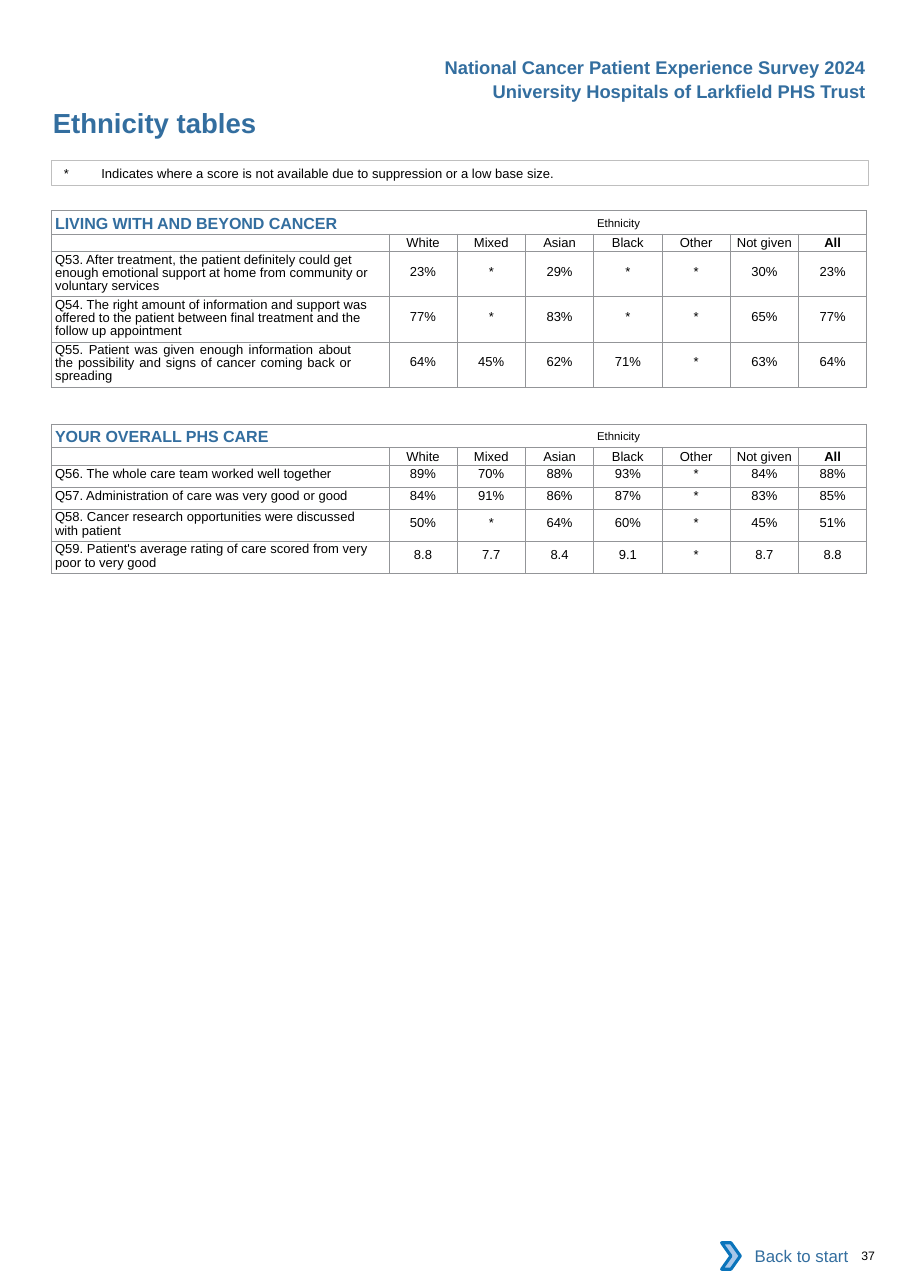
from dataclasses import dataclass

from lxml import etree
from pptx import Presentation
from pptx.dml.color import RGBColor
from pptx.enum import shapes, text
from pptx.oxml import ns
from pptx.util import Inches, Pt


@dataclass(frozen=True)
class Theme:
    font: str = "Arial"
    blue: str = "336E9F"
    black: str = "000000"
    white: str = "FFFFFF"
    grid: str = "939598"
    box_line: str = "BFBFBF"
    chevron_fill: str = "A8C7E9"
    chevron_line: str = "0A74BB"
    title: float = 18
    banner: float = 12
    heading: float = 10.5
    group_label: float = 12.8
    link: float = 11
    body: float = 8.5
    page_number: float = 8


THEME = Theme()
LEFT = 0.47
QUESTION_WIDTH, SCORE_WIDTH = 3.06, 0.62
HEADING_HEIGHT, COLUMN_HEAD_HEIGHT = 0.21, 0.16
# Row height and the top inset of its scores, by lines of question text
ROW_SIZES = {1: (0.2, 0.01), 2: (0.29, 0.06), 3: (0.41, 0.12)}
GROUPS = ["White", "Mixed", "Asian", "Black", "Other", "Not given", "All"]
JUSTIFIED = "Q55."

# Each row: lines of question text, question, scores by group
LIVING_ROWS = [
    (3, "Q53. After treatment, the patient definitely could get enough emotional "
        "support at home from community or voluntary services", "23% * 29% * * 30% 23%"),
    (3, "Q54. The right amount of information and support was offered to the patient "
        "between final treatment and the follow up appointment", "77% * 83% * * 65% 77%"),
    (3, "Q55. Patient was given enough information about the possibility and signs of "
        "cancer coming back or spreading", "64% 45% 62% 71% * 63% 64%"),
]
OVERALL_ROWS = [
    (1, "Q56. The whole care team worked well together", "89% 70% 88% 93% * 84% 88%"),
    (1, "Q57. Administration of care was very good or good", "84% 91% 86% 87% * 83% 85%"),
    (2, "Q58. Cancer research opportunities were discussed with patient",
     "50% * 64% 60% * 45% 51%"),
    (2, "Q59. Patient's average rating of care scored from very poor to very good",
     "8.8 7.7 8.4 9.1 * 8.7 8.8"),
]


def rgb(value):
    return RGBColor.from_string(value)


def style_run(run, size, color=THEME.black, bold=False):
    run.font.name = THEME.font
    run.font.size = Pt(size)
    run.font.bold = bold
    run.font.color.rgb = rgb(color)


def write(frame, content, size, color=THEME.black, bold=False, align=text.PP_ALIGN.LEFT):
    paragraph = frame.paragraphs[0]
    paragraph.text = content
    paragraph.alignment = align
    for run in paragraph.runs:
        style_run(run, size, color, bold)
    return paragraph


def add_tab_stop(paragraph, position):
    """Add a left tab stop, measured from the start of the text."""
    properties = paragraph._p.get_or_add_pPr()
    etree.SubElement(properties, ns.qn("a:buNone"))
    tabs = etree.SubElement(properties, ns.qn("a:tabLst"))
    etree.SubElement(tabs, ns.qn("a:tab"), pos=str(Inches(position)), algn="l")


def set_insets(target, left=0, top=0, right=0, bottom=0):
    target.margin_left, target.margin_top = Inches(left), Inches(top)
    target.margin_right, target.margin_bottom = Inches(right), Inches(bottom)


def add_text(slide, box, content, size, color=THEME.black, bold=False, indent=0):
    frame = slide.shapes.add_textbox(*map(Inches, box)).text_frame
    frame.word_wrap = True
    set_insets(frame, left=indent)
    write(frame, content, size, color, bold)


def add_banner_line(slide, box, content):
    frame = slide.shapes.add_textbox(*map(Inches, box)).text_frame
    frame.word_wrap = False
    frame.auto_size = text.MSO_AUTO_SIZE.SHAPE_TO_FIT_TEXT
    write(frame, content, THEME.banner, THEME.blue, True, text.PP_ALIGN.RIGHT)


def add_preset(slide, kind, box, fill=None, line=None, width=0.5):
    shape = slide.shapes.add_shape(kind, *map(Inches, box))
    shape.shadow.inherit = False
    if fill:
        shape.fill.solid()
        shape.fill.fore_color.rgb = rgb(fill)
    else:
        shape.fill.background()
    if line:
        shape.line.color.rgb = rgb(line)
        shape.line.width = Pt(width)
    else:
        shape.line.fill.background()
    return shape


def add_note(slide):
    shape = add_preset(slide, shapes.MSO_SHAPE.RECTANGLE, (LEFT, 1.46, 7.41, 0.22),
                       line=THEME.box_line)
    frame = shape.text_frame
    set_insets(frame, left=0.11, top=0.04, bottom=0.04)
    frame.vertical_anchor = text.MSO_ANCHOR.TOP
    note = "*\tIndicates where a score is not available due to suppression or a low base size."
    add_tab_stop(write(frame, note, THEME.body), 0.34)


def add_back_link(slide):
    label = add_preset(slide, shapes.MSO_SHAPE.RECTANGLE, (6.62, 11.19, 1.18, 0.42),
                       THEME.white)
    label.text_frame.vertical_anchor = text.MSO_ANCHOR.MIDDLE
    write(label.text_frame, "Back to start", THEME.link, THEME.blue,
          align=text.PP_ALIGN.RIGHT)
    add_preset(slide, shapes.MSO_SHAPE.CHEVRON, (6.55, 11.28, 0.17, 0.24),
               THEME.chevron_fill, THEME.chevron_line, 2)


def format_cell(cell):
    """Give a cell thin borders, no fill, no insets and body-sized empty text."""
    set_insets(cell)
    cell.vertical_anchor = text.MSO_ANCHOR.MIDDLE
    properties = cell._tc.get_or_add_tcPr()
    for side in ("lnL", "lnR", "lnT", "lnB"):
        line = etree.SubElement(properties, ns.qn(f"a:{side}"), w=str(Pt(0.5)))
        fill = etree.SubElement(line, ns.qn("a:solidFill"))
        etree.SubElement(fill, ns.qn("a:srgbClr"), val=THEME.grid)
    cell.fill.background()
    etree.SubElement(cell.text_frame.paragraphs[0]._p, ns.qn("a:endParaRPr"),
                     sz=str(int(THEME.body * 100)))


def fill_heading(table, heading):
    cell = table.cell(0, 0)
    cell.merge(table.cell(0, len(GROUPS)))
    set_insets(cell, left=0.03)
    paragraph = write(cell.text_frame, heading + "\t", THEME.heading, THEME.blue, True)
    add_tab_stop(paragraph, 4.92)
    label = paragraph.add_run()
    label.text = "Ethnicity"
    style_run(label, THEME.group_label)
    label.font._element.set("baseline", "10000")


def fill_question(cell, question, lines):
    cell.vertical_anchor = text.MSO_ANCHOR.TOP
    justified = question.startswith(JUSTIFIED)
    set_insets(cell, left=0.03, top=0.01 if lines == 1 else 0.02,
               right=0.34 if justified else 0.15)
    align = text.PP_ALIGN.JUSTIFY if justified else text.PP_ALIGN.LEFT
    paragraph = write(cell.text_frame, question, THEME.body, align=align)
    if lines > 1:
        paragraph.line_spacing = Pt(8.6)


def add_score_table(slide, top, heading, rows):
    heights = [HEADING_HEIGHT, COLUMN_HEAD_HEIGHT] + [ROW_SIZES[row[0]][0] for row in rows]
    widths = [QUESTION_WIDTH] + [SCORE_WIDTH] * len(GROUPS)
    frame = slide.shapes.add_table(len(heights), len(widths), Inches(LEFT), Inches(top),
                                   Inches(sum(widths)), Inches(sum(heights)))
    table = frame.table
    table.first_row = table.horz_banding = False
    for row, height in zip(table.rows, heights):
        row.height = Inches(height)
    for column, width in zip(table.columns, widths):
        column.width = Inches(width)
    for cell in table.iter_cells():
        format_cell(cell)

    fill_heading(table, heading)
    for column, group in enumerate(GROUPS, 1):
        paragraph = write(table.cell(1, column).text_frame, group, THEME.body,
                          bold=group == "All", align=text.PP_ALIGN.CENTER)
        paragraph.line_spacing = Pt(9.9)
    for index, (lines, question, scores) in enumerate(rows, 2):
        fill_question(table.cell(index, 0), question, lines)
        for column, score in enumerate(scores.split(), 1):
            cell = table.cell(index, column)
            cell.vertical_anchor = text.MSO_ANCHOR.TOP
            set_insets(cell, top=ROW_SIZES[lines][1])
            write(cell.text_frame, score, THEME.body, align=text.PP_ALIGN.CENTER)


def main():
    presentation = Presentation()
    presentation.slide_width, presentation.slide_height = Inches(8.26), Inches(11.69)
    slide = presentation.slides.add_slide(presentation.slide_layouts[6])
    add_text(slide, (7.72, 11.33, 0.51, 0.13), "37", THEME.page_number, indent=0.1)
    add_text(slide, (LEFT, 0.96, 4.5, 0.3), "Ethnicity tables", THEME.title, THEME.blue,
             True, 0.01)
    add_score_table(slide, 1.91, "LIVING WITH AND BEYOND CANCER", LIVING_ROWS)
    add_score_table(slide, 3.85, "YOUR OVERALL PHS CARE", OVERALL_ROWS)
    add_note(slide)
    add_banner_line(slide, (4.28, 0.68, 3.68, 0.3),
                    "University Hospitals of Larkfield PHS Trust")
    add_banner_line(slide, (3.92, 0.46, 4.04, 0.3),
                    "National Cancer Patient Experience Survey 2024")
    add_back_link(slide)
    presentation.save("out.pptx")


if __name__ == "__main__":
    main()
